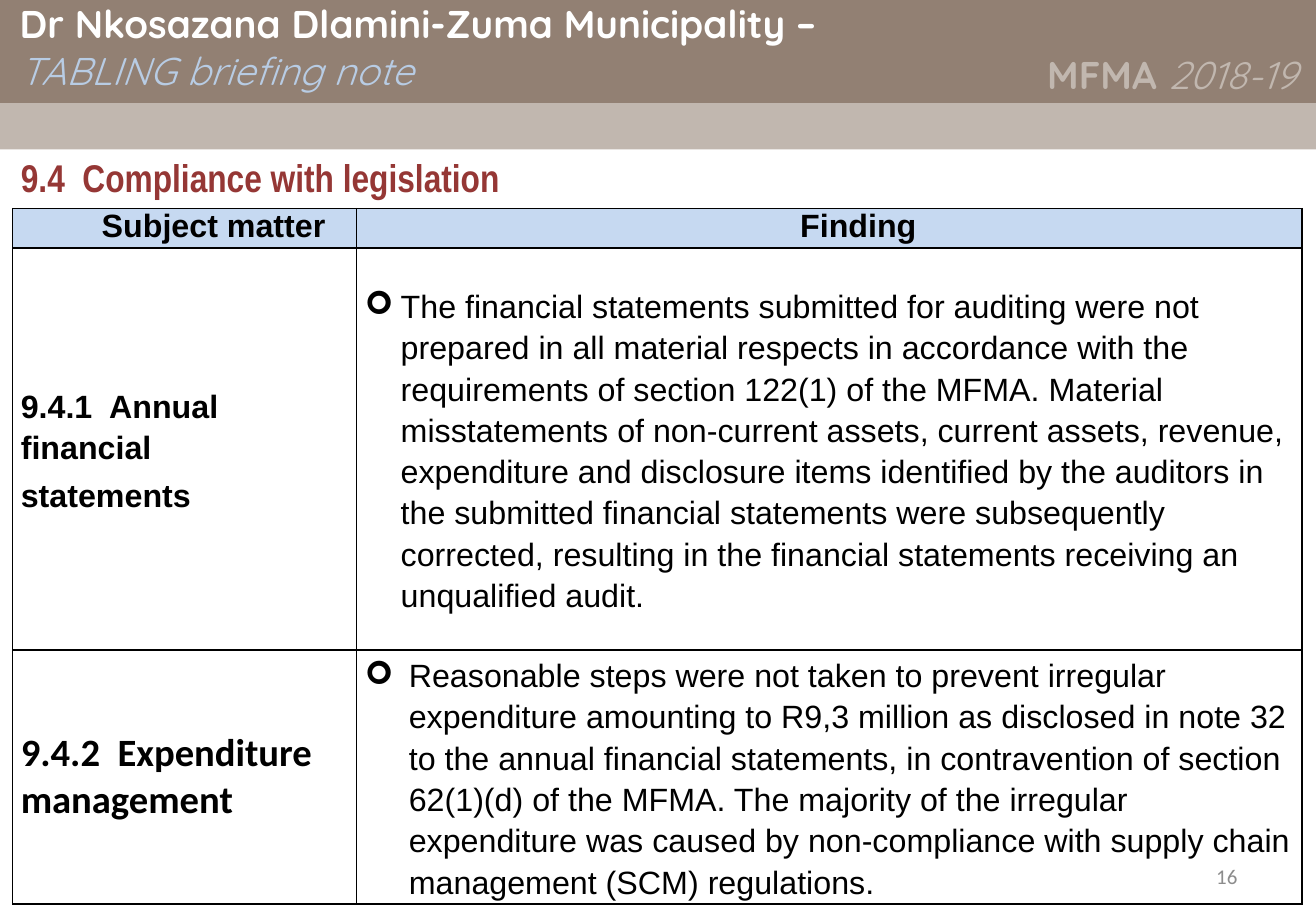
import pptx
import pptx.util
import pptx.dml.color
import pptx.enum.shapes
import pptx.enum.text
import pptx.oxml.ns
import lxml.etree

Inches, Pt = pptx.util.Inches, pptx.util.Pt
ALIGN, ANCHOR = pptx.enum.text.PP_ALIGN, pptx.enum.text.MSO_ANCHOR

# Content
COLORS = {
    "brown": "928073", "sand": "C1B7AF", "white": "FFFFFF", "pale": "B8CCE4",
    "black": "000000", "head": "C6D9F1", "red": "953735", "grey": "8C8C8C",
}
BANDS = [((0, -0.07, 11.36, 1.25), "brown"), ((0, 0.89, 11.36, 0.4), "sand")]

TITLE = dict(size=24, name="Quicksand", color="white", bold=True)
SUBTITLE = dict(TITLE, color="pale", bold=False, italic=True)
YEAR = dict(TITLE, color="sand")
HEADING = dict(size=24, name="Arial Narrow", color="red", bold=True)
NUMBER = dict(size=13, name="Calibri", color="grey")
BODY = dict(size=20, name="Arial", color="black", bold=False)
STRONG = dict(BODY, bold=True)
TOPIC = dict(STRONG, size=24, name="Calibri")

# Paragraph: (runs, paragraph format)
SPACED = dict(space_before=Pt(2), space_after=Pt(2))
LOOSE = dict(SPACED, line_spacing=1.15)
CENTER = dict(SPACED, alignment=ALIGN.CENTER)
YEAR_PARA = dict(alignment=ALIGN.RIGHT, line_spacing=1.15,
                 space_before=Pt(6), space_after=Pt(12))

# Text box: place, insets, anchor, paragraphs
TEXTS = [
    ((0.09, -0.29, 8.64, 1.25), (0.08, 0.29, 0.08, 0), ANCHOR.TOP, [
        ([("Dr Nkosazana Dlamini-Zuma Municipality –", TITLE)], {}),
        ([("TABLING briefing note", SUBTITLE)], {})]),
    ((8.64, 0.33, 2.58, 0.78), (0.03, 0.05, 0.03, 0.05), ANCHOR.TOP, [
        ([("MFMA ", YEAR), ("2018-19", dict(YEAR, bold=False, italic=True))], YEAR_PARA)]),
    ((0.07, 1.28, 10.22, 0.54), (0.11, 0.05, 0.11, 0.05), ANCHOR.TOP, [
        ([("9.4  Compliance with legislation", HEADING)], dict(space_before=Pt(4.8)))]),
    ((8.14, 7.35, 2.65, 0.42), (0.11, 0.05, 0.11, 0.05), ANCHOR.MIDDLE, [
        ([("16", NUMBER)], dict(alignment=ALIGN.RIGHT))]),
]

TABLE_AT = (0.11, 1.8)
COLS = [2.97, 8.16]
ROWS = [0.34, 3.47, 2.19]
# Cell: paragraphs, left margin, bullet
CELLS = [
    [([([("Subject matter", STRONG)], CENTER)], 0.5, None),
     ([([("Finding", STRONG)], CENTER)], 0.5, None)],
    [([([("9.4.1  Annual financial", STRONG)], LOOSE),
       ([("statements", STRONG)], LOOSE)], 0, None),
     ([([("The financial statements submitted for auditing were not prepared in all "
          "material respects in accordance with the requirements of section 122(1) of "
          "the MFMA. Material misstatements of non-current assets, current assets, "
          "revenue, expenditure and disclosure items identified by the auditors in the "
          "submitted financial statements were subsequently corrected, resulting in the "
          "financial statements receiving an unqualified audit.", BODY)], LOOSE)], 0.31, "➢")],
    [([([("9.4.2  Expenditure management", TOPIC)], SPACED)], 0, None),
     ([([("Reasonable steps were not taken to prevent irregular expenditure amounting to "
          "R9,3 million as disclosed in note 32 to the annual financial statements, in "
          "contravention of section 62(1)(d) of the MFMA. The majority of the irregular "
          "expenditure was caused by non-compliance with supply chain management (SCM) "
          "regulations.", BODY)], LOOSE)], 0.38, "➢")],
]


def rgb(key):
    return pptx.dml.color.RGBColor.from_string(COLORS[key])


def sub(parent, tag, **attrs):
    return lxml.etree.SubElement(parent, pptx.oxml.ns.qn(tag), attrs)


def write(tf, paragraphs):
    for i, (runs, fmt) in enumerate(paragraphs):
        p = tf.add_paragraph() if i else tf.paragraphs[0]
        for key, value in fmt.items():
            setattr(p, key, value)
        for text, font in runs:
            r = p.add_run()
            r.text = text
            for key, value in font.items():
                if key == "color":
                    r.font.color.rgb = rgb(value)
                else:
                    setattr(r.font, key, Pt(value) if key == "size" else value)


def indent(p, margin, bullet):
    pPr = p._p.get_or_add_pPr()
    pPr.set("marL", str(Inches(margin)))
    pPr.set("indent", str(-Inches(margin) if bullet else 0))
    if bullet:
        sub(pPr, "a:buFont", typeface="Wingdings")
        sub(pPr, "a:buChar", char=bullet)


def add_borders(cell):
    tcPr = cell._tc.get_or_add_tcPr()
    for i, side in enumerate(("a:lnL", "a:lnR", "a:lnT", "a:lnB")):
        ln = sub(tcPr, side, w=str(Pt(1)))
        sub(sub(ln, "a:solidFill"), "a:srgbClr", val=COLORS["black"])
        tcPr.insert(i, ln)


prs = pptx.Presentation()
prs.slide_width, prs.slide_height = Inches(11.36), Inches(7.93)
s = prs.slides.add_slide(prs.slide_layouts[6])

# Header bands
for place, color in BANDS:
    sp = s.shapes.add_shape(pptx.enum.shapes.MSO_SHAPE.RECTANGLE, *map(Inches, place))
    sp.shadow.inherit = False
    sp.fill.solid()
    sp.fill.fore_color.rgb = rgb(color)
    sp.line.fill.background()

# Findings table
table = s.shapes.add_table(len(ROWS), len(COLS), *map(Inches, TABLE_AT),
                           Inches(sum(COLS)), Inches(sum(ROWS))).table
table.first_row = table.horz_banding = False
for col, width in zip(table.columns, COLS):
    col.width = Inches(width)
for i, (row, height) in enumerate(zip(table.rows, ROWS)):
    row.height = Inches(height)
    for cell, (paragraphs, margin, bullet) in zip(row.cells, CELLS[i]):
        cell.margin_left = cell.margin_right = Inches(0.07)
        cell.margin_top = cell.margin_bottom = 0
        cell.vertical_anchor = ANCHOR.MIDDLE if i else ANCHOR.TOP
        if i:
            cell.fill.background()
        else:
            cell.fill.solid()
            cell.fill.fore_color.rgb = rgb("head")
        add_borders(cell)
        write(cell.text_frame, paragraphs)
        for p in cell.text_frame.paragraphs:
            indent(p, margin, bullet)

# Header texts, section heading and page number
for place, insets, anchor, paragraphs in TEXTS:
    tf = s.shapes.add_textbox(*map(Inches, place)).text_frame
    tf.word_wrap = True
    tf.vertical_anchor = anchor
    for side, inset in zip(("left", "top", "right", "bottom"), insets):
        setattr(tf, "margin_" + side, Inches(inset))
    write(tf, paragraphs)

prs.save("out.pptx")
